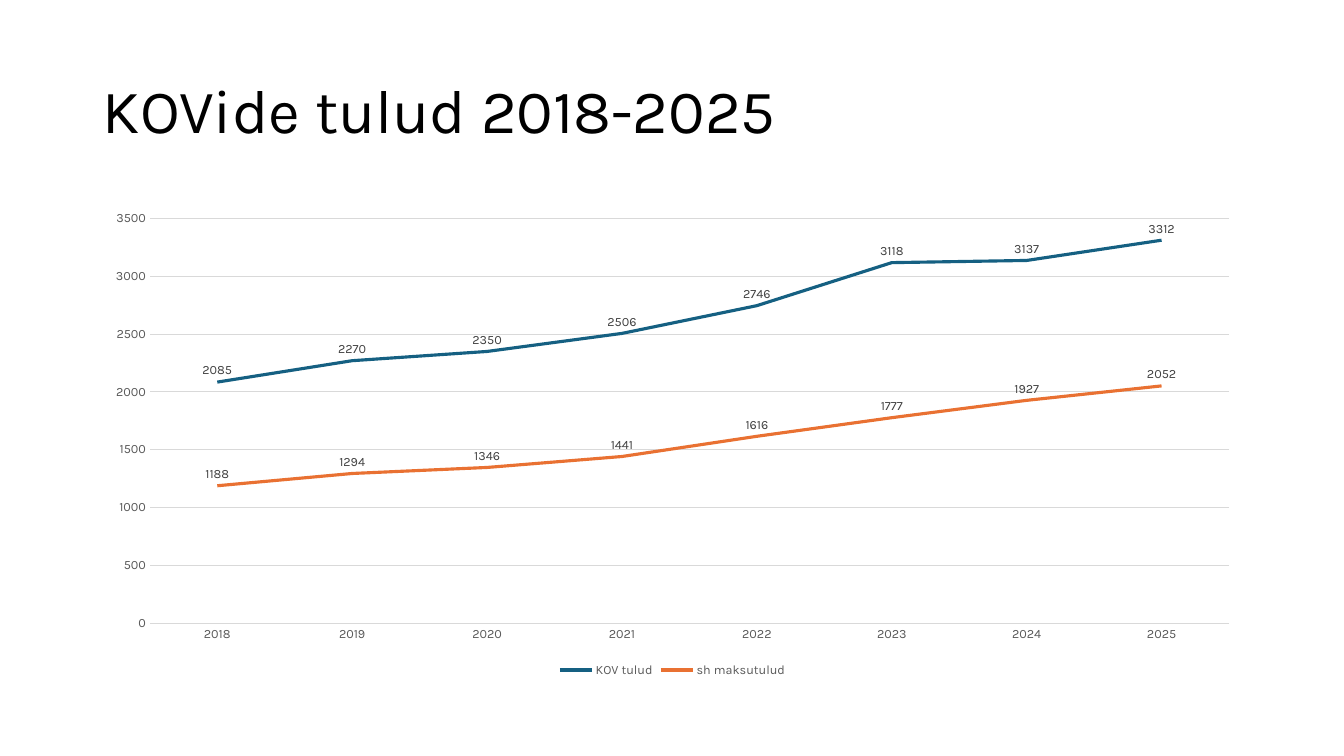
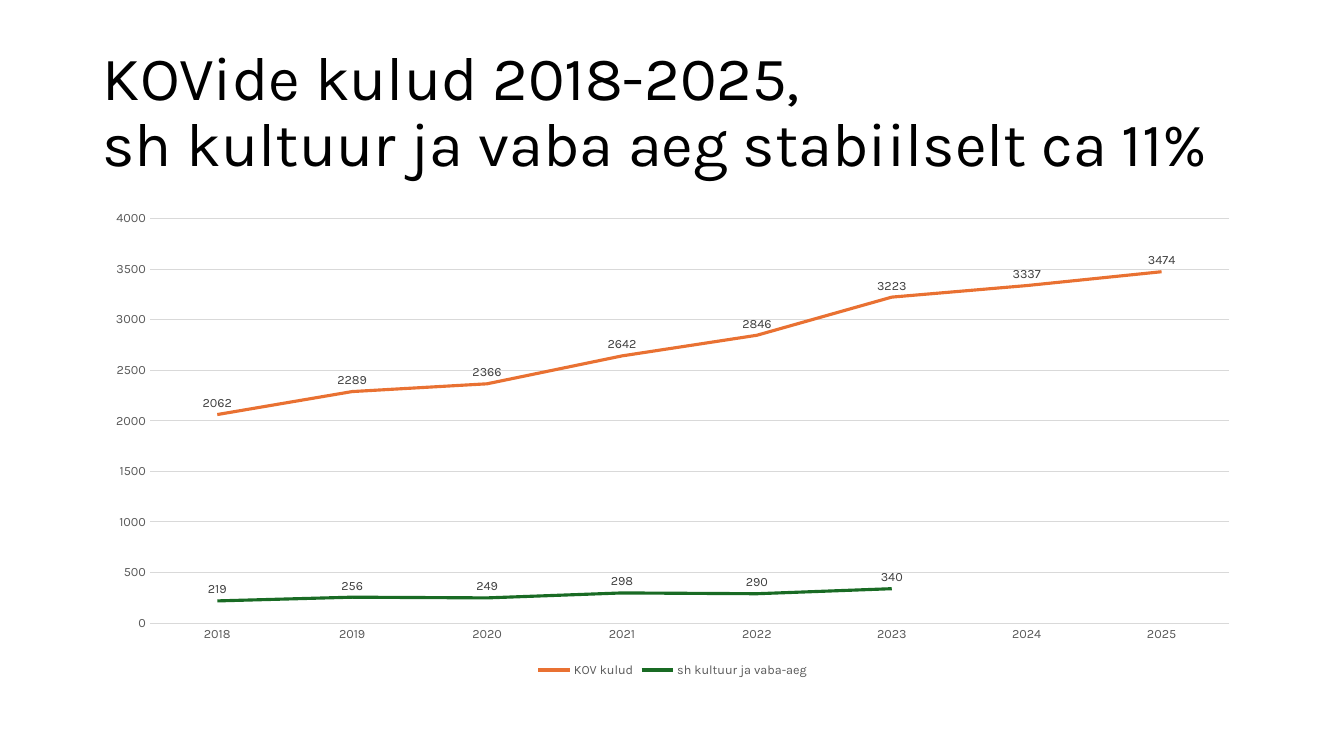
from pptx import Presentation
from pptx.chart.data import CategoryChartData
from pptx.dml.color import RGBColor
from pptx.enum.chart import (XL_CHART_TYPE as ChartType, XL_LABEL_POSITION as LabelPos,
                             XL_LEGEND_POSITION as LegendPos, XL_TICK_MARK as Tick)
from pptx.enum.text import MSO_ANCHOR as Anchor
from pptx.util import Inches, Pt

FONT = "Karla"
BLACK, GREY, DARK, RULE = "000000", "595959", "404040", "D9D9D9"
BLUE, ORANGE, GREEN = "156082", "E97132", "196B24"
TITLE_BOX = (0.92, 0.4, 11.5, 1.45)
CHART_BOX = (0.92, 2, 11.5, 4.76)
YEARS = [str(year) for year in range(2018, 2026)]

SLIDES = [
    ("KOVide tulud 2018-2025", 500, 3500, [
        ("KOV tulud", BLUE, (2085, 2270, 2350, 2506, 2746, 3118, 3137, 3312)),
        ("sh maksutulud", ORANGE, (1188, 1294, 1346, 1441, 1616, 1777, 1927, 2052)),
    ]),
    ("KOVide kulud 2018-2025,\vsh kultuur ja vaba aeg stabiilselt ca 11%", 500, 4000, [
        ("KOV kulud", ORANGE, (2062, 2289, 2366, 2642, 2846, 3223, 3337, 3474)),
        ("sh kultuur ja vaba-aeg", GREEN, (219, 256, 249, 298, 290, 340, None, None)),
    ]),
]


def rgb(value):
    return RGBColor.from_string(value)


def set_font(font, size, color):
    font.name = FONT
    font.size = Pt(size)
    font.bold = False
    font.color.rgb = rgb(color)


def set_line(line, color, width):
    line.color.rgb = rgb(color)
    line.width = Pt(width)


def add_title(slide, box, text):
    tf = slide.shapes.add_textbox(*map(Inches, box)).text_frame
    tf.word_wrap = True
    tf.vertical_anchor = Anchor.MIDDLE
    p = tf.paragraphs[0]
    p.text = text
    p.line_spacing = 0.9
    for r in p.runs:
        set_font(r.font, 44, BLACK)


def style_axes(chart, step, top):
    for axis in (chart.category_axis, chart.value_axis):
        axis.major_tick_mark = axis.minor_tick_mark = Tick.NONE
        set_font(axis.tick_labels.font, 9, GREY)
    set_line(chart.category_axis.format.line, RULE, 0.75)
    values = chart.value_axis
    values.minimum_scale, values.maximum_scale, values.major_unit = 0, top, step
    values.tick_labels.number_format = "0"
    values.tick_labels.number_format_is_linked = False
    values.format.line.fill.background()
    set_line(values.major_gridlines.format.line, RULE, 0.75)


def style_series(series, color):
    series.smooth = False
    set_line(series.format.line, color, 2.25)
    labels = series.data_labels
    labels.show_value = True
    labels.position = LabelPos.ABOVE
    labels.number_format = "0"
    labels.number_format_is_linked = False
    set_font(labels.font, 9, DARK)


def add_line_chart(slide, box, step, top, rows):
    data = CategoryChartData(number_format="0")
    data.categories = YEARS
    for name, _, values in rows:
        data.add_series(name, values)
    chart = slide.shapes.add_chart(ChartType.LINE, *map(Inches, box), data).chart
    set_font(chart.font, 10, BLACK)
    chart.has_title = False
    chart.has_legend = True
    chart.legend.position = LegendPos.BOTTOM
    chart.legend.include_in_layout = False
    set_font(chart.legend.font, 9, GREY)
    style_axes(chart, step, top)
    plot = chart.plots[0]
    plot.vary_by_categories = False
    for series, (_, color, _) in zip(plot.series, rows):
        style_series(series, color)


def main():
    prs = Presentation()
    prs.slide_width, prs.slide_height = Inches(13.33), Inches(7.5)
    for title, step, top, rows in SLIDES:
        slide = prs.slides.add_slide(prs.slide_layouts[6])
        add_title(slide, TITLE_BOX, title)
        add_line_chart(slide, CHART_BOX, step, top, rows)
    prs.save("out.pptx")


if __name__ == "__main__":
    main()
